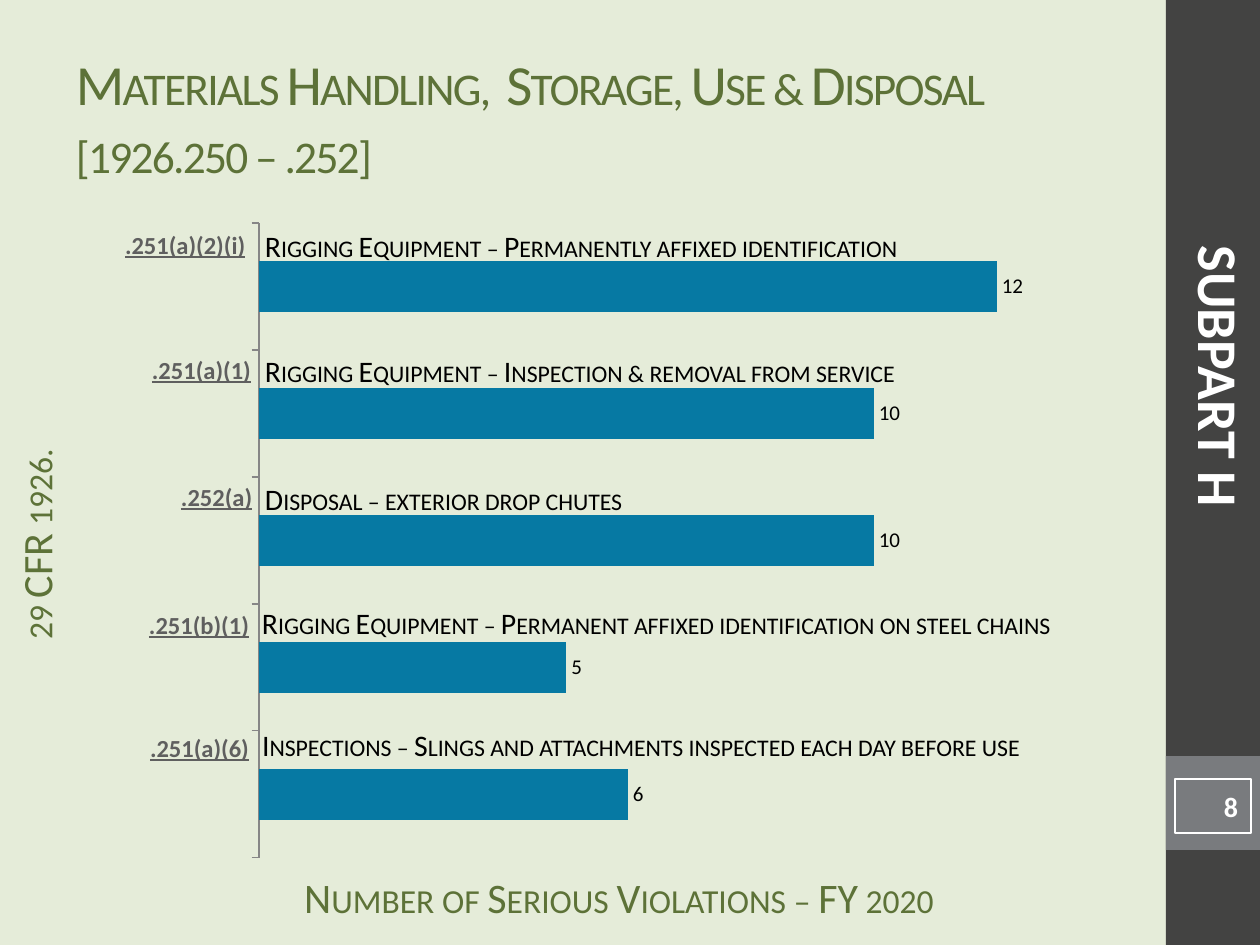
import pptx
import pptx.util
import pptx.chart.data
import pptx.dml.color
import pptx.enum.chart
import pptx.enum.shapes
import pptx.enum.text
import lxml.etree

EMU_PER_PX = 914400 / 126
ALIGN = pptx.enum.text.PP_ALIGN
ANCHOR = pptx.enum.text.MSO_ANCHOR
AUTO_SIZE = pptx.enum.text.MSO_AUTO_SIZE
TICK = pptx.enum.chart.XL_TICK_MARK
TICK_LABEL = pptx.enum.chart.XL_TICK_LABEL_POSITION

GREEN, BLACK, WHITE, GREY = "5D7238", "000000", "FFFFFF", "5F5F5F"
SMALL_CAPS = {"cap": "small"}
NO_INSET = (0, 0, 0, 0)
CAPTION_INSET = (13, 0, 13, 6)
DEFAULT_INSET = (13, 6, 13, 6)


def px(length):
    return pptx.util.Emu(round(length * EMU_PER_PX))


def color(hex_string):
    return pptx.dml.color.RGBColor.from_string(hex_string)


def set_all(target, values):
    for name, value in values.items():
        setattr(target, name, value)


class SlideBuilder:
    font_name = "Calibri"

    def __init__(self, slide, background):
        self.slide = slide
        slide.background.fill.solid()
        slide.background.fill.fore_color.rgb = color(background)

    def style_font(self, font, size, hex_color, **extra):
        set_all(font, {"name": self.font_name, "size": pptx.util.Pt(size), **extra})
        font.color.rgb = color(hex_color)

    def fill_text(self, shape, text, size, hex_color, align=ALIGN.LEFT, inset=DEFAULT_INSET,
                  frame_format=None, run_attributes=None, **font_format):
        frame = shape.text_frame
        sides = ("margin_left", "margin_top", "margin_right", "margin_bottom")
        set_all(frame, {"word_wrap": True, "vertical_anchor": ANCHOR.TOP,
                        **dict(zip(sides, map(px, inset))), **(frame_format or {})})
        paragraph = frame.paragraphs[0]
        paragraph.text = text
        paragraph.alignment = align
        for run in paragraph.runs:
            self.style_font(run.font, size, hex_color, **font_format)
            for name, value in (run_attributes or {}).items():
                run._r.get_or_add_rPr().set(name, value)

    def title(self, box, text, size, hex_color, **options):
        heading = self.slide.shapes.title
        set_all(heading, dict(zip(("left", "top", "width", "height"), map(px, box))))
        self.fill_text(heading, text, size, hex_color, **options)

    def text(self, box, text, size, hex_color, rotation=0, **options):
        label = self.slide.shapes.add_textbox(*map(px, box))
        label.rotation = rotation
        self.fill_text(label, text, size, hex_color, **options)

    def rectangle(self, box, fill=None, line=None):
        panel = self.slide.shapes.add_shape(
            pptx.enum.shapes.MSO_SHAPE.RECTANGLE, *map(px, box))
        panel.shadow.inherit = False
        if fill:
            panel.fill.solid()
            panel.fill.fore_color.rgb = color(fill)
        else:
            panel.fill.background()
        if line:
            panel.line.color.rgb = color(line)
            panel.line.width = pptx.util.Pt(1.5)
        else:
            panel.line.fill.background()
        return panel

    def bar_chart(self, box, plot, categories, values, bar_color, maximum):
        chart_data = pptx.chart.data.CategoryChartData()
        chart_data.categories = categories
        chart_data.add_series("Series 1", values)
        chart = self.slide.shapes.add_chart(
            pptx.enum.chart.XL_CHART_TYPE.BAR_CLUSTERED, *map(px, box), chart_data).chart
        set_all(chart, {"has_legend": False, "has_title": False})
        self.style_font(chart.font, 10, BLACK)

        # Axes
        set_all(chart.category_axis, {
            "major_tick_mark": TICK.OUTSIDE, "minor_tick_mark": TICK.NONE,
            "tick_label_position": TICK_LABEL.NONE, "has_major_gridlines": False})
        chart.category_axis.format.line.color.rgb = color("868686")
        set_all(chart.value_axis, {
            "visible": False, "has_major_gridlines": False,
            "minimum_scale": 0, "maximum_scale": maximum})

        # Bars and their values
        bars = chart.plots[0]
        set_all(bars, {"gap_width": 150, "vary_by_categories": False, "has_data_labels": True})
        bars.series[0].format.fill.solid()
        bars.series[0].format.fill.fore_color.rgb = color(bar_color)
        set_all(bars.data_labels, {
            "show_value": True,
            "position": pptx.enum.chart.XL_LABEL_POSITION.OUTSIDE_END})
        self.style_font(bars.data_labels.font, 12, BLACK)

        # Fixed plot area, as fractions of the chart box
        plot_area = chart._chartSpace.chart.plotArea
        namespace = "{%s}" % plot_area.nsmap["c"]
        for old_layout in plot_area.findall(namespace + "layout"):
            plot_area.remove(old_layout)
        layout = lxml.etree.Element(namespace + "layout")
        manual = lxml.etree.SubElement(layout, namespace + "manualLayout")
        settings = {
            "layoutTarget": "inner", "xMode": "edge", "yMode": "edge",
            "x": (plot[0] - box[0]) / box[2], "y": (plot[1] - box[1]) / box[3],
            "w": plot[2] / box[2], "h": plot[3] / box[3]}
        for name, value in settings.items():
            lxml.etree.SubElement(manual, namespace + name).set("val", str(value))
        plot_area.insert(0, layout)


def main():
    presentation = pptx.Presentation()
    presentation.slide_width, presentation.slide_height = px(1260), px(945)
    builder = SlideBuilder(
        presentation.slides.add_slide(presentation.slide_layouts[5]), "E5ECD9")

    # Side band
    builder.rectangle((1166, 0, 94, 945), fill="434342")
    builder.rectangle((1166, 756, 94, 94), fill="797B7E")

    # Axis captions
    caption = {"align": ALIGN.CENTER, "inset": CAPTION_INSET, "run_attributes": SMALL_CAPS}
    builder.text((262, 872, 714, 42), "Number of Serious Violations – FY 2020",
                 24, GREEN, **caption)
    builder.text((-217, 508, 528, 73), "29 CFR 1926.", 24, GREEN, rotation=270, **caption)

    # Violations chart
    builder.bar_chart((242, 210, 896, 662), (259, 223, 861, 635),
                      ["1", "2", "3", "4", "5"], [6, 5, 10, 10, 12], "0679A3", 14)

    # Title
    builder.title((63, 38, 1050, 158),
                  "Materials Handling,  Storage, Use & Disposal \v[1926.250 – .252]",
                  32.4, GREEN, run_attributes={**SMALL_CAPS, "spc": "-100"},
                  frame_format={"vertical_anchor": ANCHOR.MIDDLE, "auto_size": AUTO_SIZE.NONE})

    # Standard number and description above each bar
    fitted = {"frame_format": {"word_wrap": False, "auto_size": AUTO_SIZE.SHAPE_TO_FIT_TEXT}}
    fixed = {"inset": NO_INSET}
    violations = [
        (".251(a)(2)(i)", (112, 224, 181, 43),
         "Rigging Equipment – Permanently affixed identification", (252, 222, 674, 49), fitted),
        (".251(a)(1)", (139, 349, 151, 43),
         "Rigging Equipment – Inspection & removal from service", (252, 347, 679, 49), fitted),
        (".252(a)", (168, 476, 116, 43),
         "Disposal – exterior drop chutes", (252, 475, 396, 49), fitted),
        (".251(b)(1)", (136, 604, 152, 43),
         "Rigging Equipment – Permanent affixed identification on steel chains",
         (262, 605, 819, 42), fixed),
        (".251(a)(6)", (137, 727, 147, 43),
         "Inspections – Slings and attachments inspected each day before use",
         (262, 727, 788, 40), fixed),
    ]
    for standard, standard_box, description, description_box, options in violations:
        builder.text(description_box, description, 17, BLACK,
                     run_attributes=SMALL_CAPS, **options)
        builder.text(standard_box, standard, 14, GREY, bold=True, underline=True)

    # Subpart name and page number
    builder.text((843, 336, 753, 81), "SUBPART H", 32, WHITE, rotation=90,
                 align=ALIGN.CENTER, bold=True)
    page_box = builder.rectangle((1175, 779, 76, 54), line=WHITE)
    builder.fill_text(page_box, "8", 16, WHITE, align=ALIGN.RIGHT, bold=True,
                      frame_format={"vertical_anchor": ANCHOR.MIDDLE})

    presentation.save("out.pptx")


if __name__ == "__main__":
    main()
